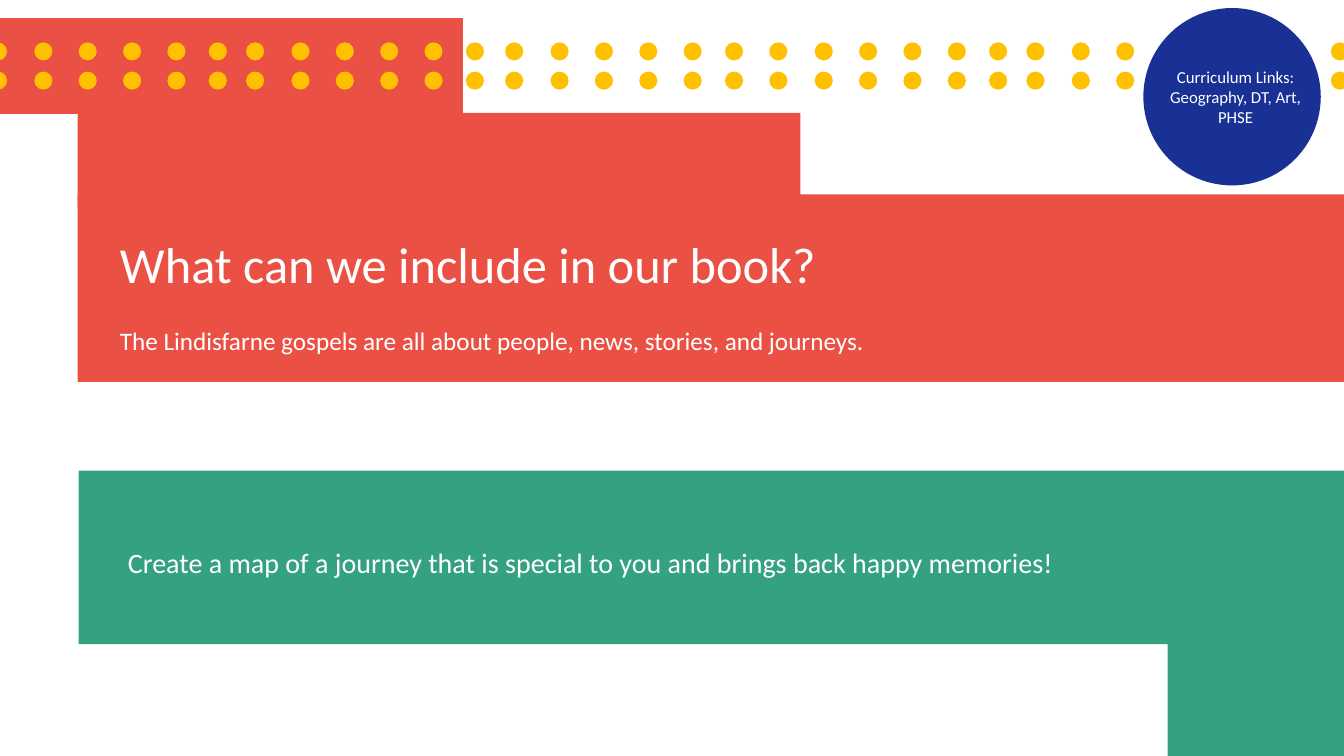
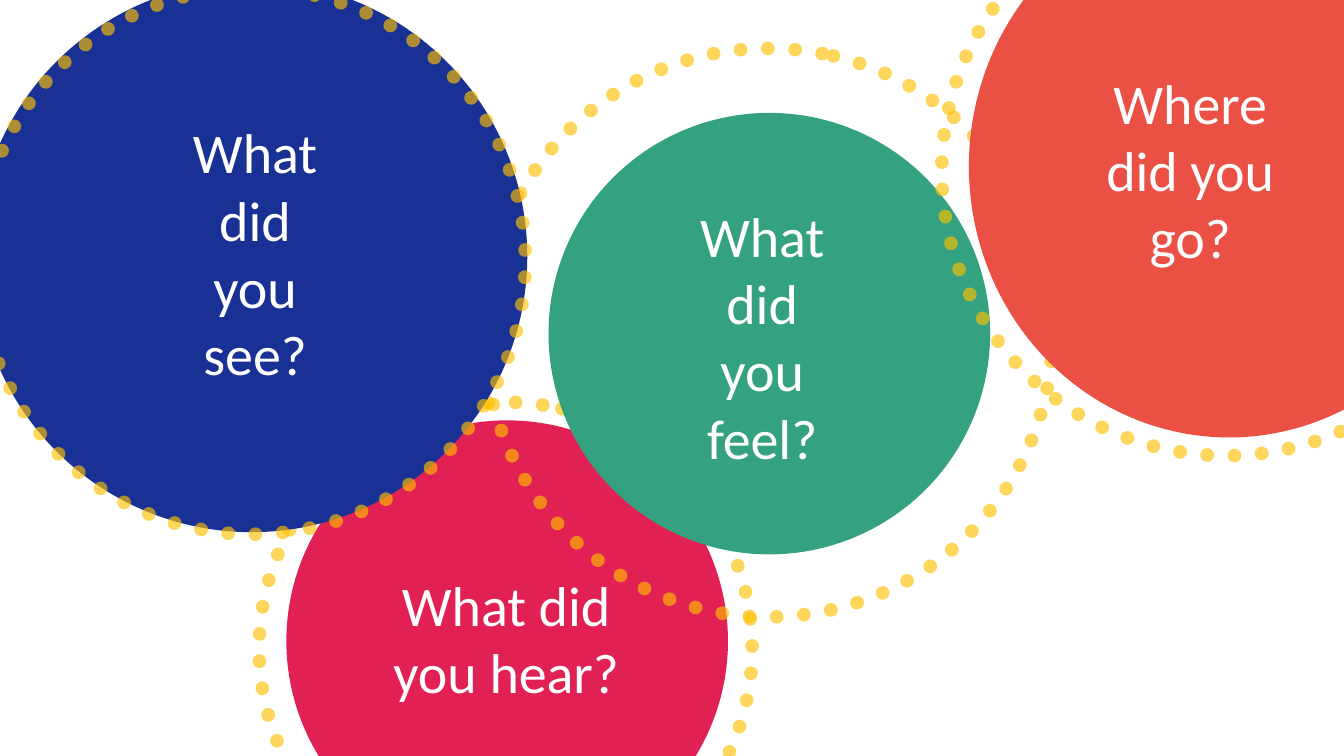
from lxml.etree import SubElement
from pptx import Presentation
from pptx.dml.color import RGBColor
from pptx.enum.shapes import MSO_SHAPE
from pptx.enum.text import MSO_ANCHOR, PP_ALIGN
from pptx.oxml.ns import qn
from pptx.util import Inches, Pt

SLIDE_WIDTH, SLIDE_HEIGHT = 13.33, 7.5
RED, GREEN, BLUE, PINK = "EA5044", "34A280", "193194", "E12154"
YELLOW, WHITE = "FFC000", "FFFFFF"


def rgb(hex_colour):
    return RGBColor.from_string(hex_colour)


class Deck:
    """Shared style and the slide being built."""

    font = "Calibri"
    title_layout, blank_layout = 5, 6

    def __init__(self):
        self.prs = Presentation()
        self.prs.slide_width = Inches(SLIDE_WIDTH)
        self.prs.slide_height = Inches(SLIDE_HEIGHT)
        self.slide = None

    def new_slide(self, layout):
        self.slide = self.prs.slides.add_slide(self.prs.slide_layouts[layout])

    def shape(self, kind, left, top, width, height, colour=None):
        shape = self.slide.shapes.add_shape(
            kind, Inches(left), Inches(top), Inches(width), Inches(height))
        shape.shadow.inherit = False
        shape.line.fill.background()
        if colour:
            shape.fill.solid()
            shape.fill.fore_color.rgb = rgb(colour)
        else:
            shape.fill.background()
        return shape

    def band(self, left, top, width, height, colour):
        self.shape(MSO_SHAPE.RECTANGLE, left, top, width, height, colour)

    def disc(self, left, top, width, height, colour):
        self.shape(MSO_SHAPE.OVAL, left, top, width, height, colour)

    def ring(self, left, top, size):
        """Circle outlined with translucent round dots."""
        ring = self.shape(MSO_SHAPE.OVAL, left, top, size, size)
        ring.rotation = 103.2
        ring.line.color.rgb = rgb(YELLOW)
        ring.line.width = Pt(9.75)
        outline = ring.element.spPr.find(qn("a:ln"))
        outline.set("cap", "rnd")
        colour = outline.find(".//" + qn("a:srgbClr"))
        SubElement(colour, qn("a:alpha"), val="64000")
        SubElement(outline, qn("a:prstDash"), val="sysDot")

    def set_text(self, frame, words, size, align):
        frame.text = words
        frame.word_wrap = True
        frame.vertical_anchor = MSO_ANCHOR.TOP
        paragraph = frame.paragraphs[0]
        paragraph.alignment = align
        font = paragraph.runs[0].font
        font.name, font.size = self.font, Pt(size)
        font.color.rgb = rgb(WHITE)

    def text(self, left, top, width, height, words, size, align=PP_ALIGN.LEFT):
        box = self.slide.shapes.add_textbox(
            Inches(left), Inches(top), Inches(width), Inches(height))
        self.set_text(box.text_frame, words, size, align)

    def title(self, left, top, width, height, words):
        title = self.slide.shapes.title
        title.left, title.top = Inches(left), Inches(top)
        title.width, title.height = Inches(width), Inches(height)
        self.set_text(title.text_frame, words, 36, PP_ALIGN.LEFT)
        # Bring the title in front of the bands
        title.element.getparent().append(title.element)


def build_book_slide(deck):
    deck.new_slide(deck.title_layout)

    # Stepped colour bands
    deck.band(0.78, 4.67, 12.57, 1.72, GREEN)
    deck.band(11.58, 5.78, 1.76, 1.72, GREEN)
    deck.band(0.77, 1.93, 12.57, 1.86, RED)
    deck.band(0.77, 1.12, 7.17, 0.95, RED)
    deck.band(0, 0.18, 4.59, 0.95, RED)

    # Two rows of dots, in clusters of six
    cluster_starts = (-0.11, 2.44, 5.01, 7.63, 10.18, 12.75)
    dot_offsets = (0, 0.45, 0.89, 1.33, 1.77, 2.18)
    for row_top in (0.42, 0.71):
        for start in cluster_starts:
            for offset in dot_offsets:
                if start + offset < SLIDE_WIDTH:
                    deck.disc(start + offset, row_top, 0.18, 0.18, YELLOW)

    # Curriculum badge
    deck.disc(11.34, 0.08, 1.76, 1.76, BLUE)
    deck.text(11.35, 0.61, 1.81, 0.71,
              "Curriculum Links: Geography, DT, Art, PHSE", 12, PP_ALIGN.CENTER)

    # Question and task
    deck.title(1.09, 2.26, 8.48, 0.75, "What can we include in our book?")
    deck.text(1.09, 3.18, 8.48, 0.4,
              "The Lindisfarne gospels are all about people, news, stories, "
              "and journeys.", 18)
    deck.text(1.17, 5.36, 10.92, 0.44,
              "Create a map of a journey that is special to you and brings "
              "back happy memories!", 20)


def build_questions_slide(deck):
    deck.new_slide(deck.blank_layout)

    # Overlapping discs and dotted rings, back to front
    deck.ring(2.57, 3.99, 4.89)
    deck.disc(2.84, 4.17, 4.38, 4.38, PINK)
    deck.ring(4.8, 0.48, 5.64)
    deck.disc(-0.24, -0.19, 5.47, 5.47, BLUE)
    deck.disc(5.44, 1.12, 4.38, 4.38, GREEN)
    deck.disc(9.61, -1.04, 5.16, 5.38, RED)
    deck.ring(9.34, -1.12, 5.64)
    deck.ring(-0.21, -0.12, 5.42)

    # Questions
    questions = (
        (1.65, 1.12, 1.76, 2.79, "What did you see?"),
        (6.68, 1.95, 1.76, 2.79, "What did you feel?"),
        (3.61, 5.61, 2.82, 1.45, "What did you hear?"),
        (10.87, 0.63, 1.87, 2.79, "Where did you go?"),
    )
    for question in questions:
        deck.text(*question, 40, PP_ALIGN.CENTER)


def main():
    deck = Deck()
    build_book_slide(deck)
    build_questions_slide(deck)
    deck.prs.save("out.pptx")


if __name__ == "__main__":
    main()
